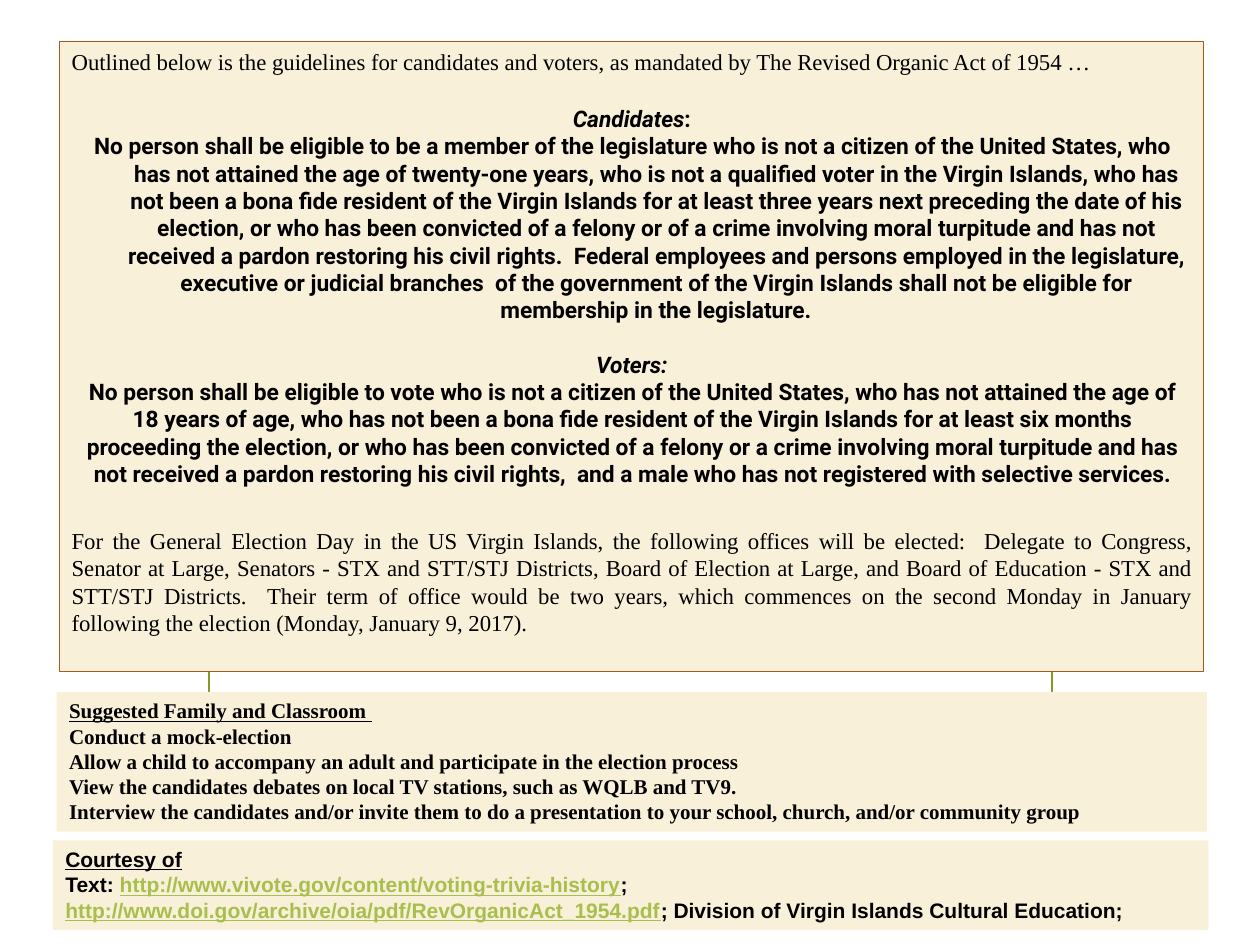
from pptx import Presentation
from pptx.dml.color import RGBColor
from pptx.enum.shapes import MSO_SHAPE as Shape
from pptx.enum.text import MSO_ANCHOR as Anchor, PP_ALIGN as Align
from pptx.util import Inches, Pt

CREAM, BROWN, GREEN, LINK, BLACK = "F8F0D9", "A45A1D", "83992A", "A8BF4D", "000000"


def color(hex_text):
    return RGBColor.from_string(hex_text)


class SlideBuilder:
    """Holds the current slide and draws its panels and text."""

    def __init__(self, slide):
        self.shapes = slide.shapes

    def panel(self, left, top, width, height, fill=None, line=None, weight=0.75):
        shape = self.shapes.add_shape(
            Shape.RECTANGLE, Inches(left), Inches(top), Inches(width), Inches(height))
        shape.shadow.inherit = False
        if fill:
            shape.fill.solid()
            shape.fill.fore_color.rgb = color(fill)
        else:
            shape.fill.background()
        if line:
            shape.line.color.rgb = color(line)
            shape.line.width = Pt(weight)
        else:
            shape.line.fill.background()
        self.set_frame(shape)
        return shape

    def text_box(self, left, top, width, height):
        box = self.shapes.add_textbox(
            Inches(left), Inches(top), Inches(width), Inches(height))
        self.set_frame(box)
        box.text_frame.margin_top = 0
        return box

    def set_frame(self, box):
        box.text_frame.word_wrap = True
        box.text_frame.vertical_anchor = Anchor.TOP

    def add_text(self, box, paragraphs, font, size, align=Align.LEFT, bold=False):
        """Each paragraph is a list of (text, font settings) pairs."""
        frame = box.text_frame
        for index, spans in enumerate(paragraphs):
            para = frame.add_paragraph() if index else frame.paragraphs[0]
            para.alignment = align
            for text, settings in spans:
                span = para.add_run()
                span.text = text
                span.font.name = font
                span.font.size = Pt(size)
                span.font.bold = bold
                span.font.italic = settings.get("italic", False)
                span.font.underline = settings.get("underline", False)
                span.font.color.rgb = color(settings.get("color", BLACK))
        return frame.paragraphs

    def indent(self, para, margin, first_line):
        properties = para._p.get_or_add_pPr()
        properties.set("marL", str(Inches(margin)))
        properties.set("indent", str(Inches(first_line)))


def main():
    deck = Presentation()
    deck.slide_width, deck.slide_height = Inches(10), Inches(7.5)
    page = SlideBuilder(deck.slides.add_slide(deck.slide_layouts[6]))
    italic, underline = {"italic": True}, {"underline": True}
    link = {"underline": True, "color": LINK}

    # Green frame behind the panels
    page.panel(1.66, 1.66, 6.69, 4.18, line=GREEN, weight=1.25)

    # Introduction and offices to be elected
    guidelines = page.panel(0.47, 0.33, 9.08, 5, CREAM, BROWN)
    intro, offices = page.add_text(guidelines, [
        [("Outlined below is the guidelines for candidates and voters, as mandated by "
          "The Revised Organic Act of 1954 …", {})],
        [("For the General Election Day in the US Virgin Islands, the following offices "
          "will be elected:  Delegate to Congress, Senator at Large, Senators - STX and "
          "STT/STJ Districts, Board of Election at Large, and Board of Education - STX "
          "and STT/STJ Districts.  Their term of office would be two years, which "
          "commences on the second Monday in January following the election (Monday, "
          "January 9, 2017).", {})],
    ], "Times New Roman", 13, Align.JUSTIFY)
    offices.space_before = Pt(258)

    # Rules for candidates and voters
    rules = page.text_box(0.46, 0.83, 9.08, 2.92)
    paragraphs = page.add_text(rules, [
        [("Candidates", italic), (":", {})],
        [("No person shall be eligible to be a member of the legislature who is not a "
          "citizen of the United States, who has not attained the age of twenty-one "
          "years, who is not a qualified voter in the Virgin Islands, who has not been a "
          "bona fide resident of the Virgin Islands for at least three years next "
          "preceding the date of his election, or who has been convicted of a felony or "
          "of a crime involving moral turpitude and has not received a pardon restoring "
          "his civil rights.  Federal employees and persons employed in the legislature, "
          "executive or judicial branches  of the government of the Virgin Islands shall "
          "not be eligible for membership in the legislature.", {})],
        [("Voters:", italic)],
        [("No person shall be eligible to vote who is not a citizen of the United States, "
          "who has not attained the age of 18 years of age, who has not been a bona fide "
          "resident of the Virgin Islands for at least six months proceeding the "
          "election, or who has been convicted of a felony or a crime involving moral "
          "turpitude and has not received a pardon restoring his civil rights,  and a "
          "male who has not registered with selective services.", {})],
    ], "Roboto", 13, Align.CENTER, bold=True)
    for para in paragraphs[:2]:
        page.indent(para, 0.41, -0.38)
    for para in paragraphs[2:]:
        page.indent(para, 0.03, 0)
    paragraphs[2].space_before = Pt(15.6)

    # Suggested activities
    activities = page.panel(0.45, 5.49, 9.13, 1.11, CREAM)
    page.add_text(activities, [
        [("Suggested Family and Classroom ", underline)],
        [("Conduct a mock-election", {})],
        [("Allow a child to accompany an adult and participate in the election process", {})],
        [("View the candidates debates on local TV stations, such as WQLB and TV9.", {})],
        [("Interview the candidates and/or invite them to do a presentation to your "
          "school, church, and/or community group", {})],
    ], "Times New Roman", 12, bold=True)

    # Sources
    sources = page.panel(0.42, 6.67, 9.17, 0.71, CREAM)
    page.add_text(sources, [
        [("Courtesy of", underline)],
        [("Text: ", {}),
         ("http://www.vivote.gov/content/voting-trivia-history", link),
         ("; ", {}),
         ("http://www.doi.gov/archive/oia/pdf/RevOrganicAct_1954.pdf", link),
         ("; Division of Virgin Islands Cultural Education;", {})],
    ], "Arial", 12, bold=True)

    deck.save("out.pptx")


if __name__ == "__main__":
    main()
